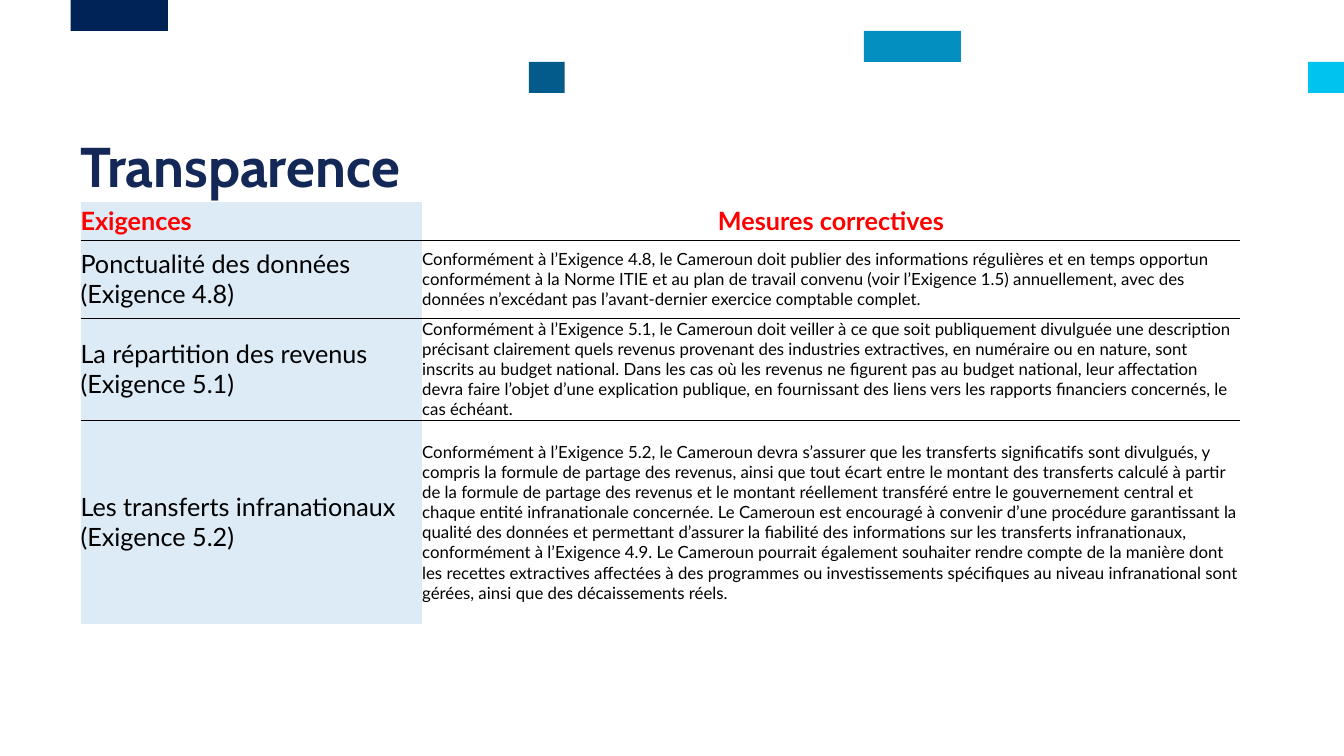
from lxml import etree
from pptx import Presentation
from pptx import util as u
from pptx.dml.color import RGBColor
from pptx.enum import shapes, text
from pptx.oxml import ns

COLORS = {
    "navy": "002357", "blue": "025B8B", "teal": "038FBF", "cyan": "00C3F0",
    "title": "132856", "red": "FF0000", "black": "000000", "pale": "DDEBF7",
    "rule": "000100",
}
BARS = [("navy", 1.78, 0, 2.45), ("blue", 13.33, 2, 0.9),
        ("teal", 21.77, 1, 2.45), ("cyan", 32.97, 2, 0.9)]
COLS = [8.61, 20.6]
ROWS = [0.98, 1.96, 2.58, 5.13]
RULES = [0, 1.5, 1, 1, 0]
CELLS = [
    (["Exigences"], ["Mesures correctives"]),
    (["Ponctualité des données (Exigence 4.8)"],
     ["Conformément à l’Exigence 4.8, le Cameroun doit publier des informations "
      "régulières et en temps opportun conformément à la Norme ITIE et au plan de "
      "travail convenu (voir l’Exigence 1.5) annuellement, avec des données "
      "n’excédant pas l’avant-dernier exercice comptable complet."]),
    (["La répartition des revenus (Exigence 5.1)"],
     ["Conformément à l’Exigence 5.1, le Cameroun doit veiller à ce que soit "
      "publiquement divulguée une description précisant clairement quels revenus "
      "provenant des industries extractives, en numéraire ou en nature, sont "
      "inscrits au budget national.",
      "Dans les cas où les revenus ne figurent pas au budget national, leur "
      "affectation devra faire l’objet d’une explication publique, en fournissant "
      "des liens vers les rapports financiers concernés, le cas échéant."]),
    (["Les transferts infranationaux (Exigence 5.2)"],
     ["Conformément à l’Exigence 5.2, le Cameroun devra s’assurer que les "
      "transferts significatifs sont divulgués, y compris la formule de partage "
      "des revenus, ainsi que tout écart entre le montant des transferts calculé à "
      "partir de la formule de partage des revenus et le montant réellement "
      "transféré entre le gouvernement central et chaque entité infranationale "
      "concernée.",
      "Le Cameroun est encouragé à convenir d’une procédure garantissant la "
      "qualité des données et permettant d’assurer la fiabilité des informations "
      "sur les transferts infranationaux, conformément à l’Exigence 4.9.",
      "Le Cameroun pourrait également souhaiter rendre compte de la manière dont "
      "les recettes extractives affectées à des programmes ou investissements "
      "spécifiques au niveau infranational sont gérées, ainsi que des "
      "décaissements réels."]),
]


def color(name):
    return RGBColor.from_string(COLORS[name])


def write(frame, words, size, font="Lato", ink="black", bold=False,
          align=text.PP_ALIGN.LEFT, space=1.0):
    para = frame.paragraphs[0]
    para.alignment = align
    para.line_spacing = space
    para.space_before = u.Pt(0)
    run = para.add_run()
    run.text = words
    run.font.size = u.Pt(size)
    run.font.name = font
    run.font.bold = bold
    run.font.color.rgb = color(ink)


def add_bars(slide, left, top, step):
    for ink, x, row, width in BARS:
        bar = slide.shapes.add_shape(
            shapes.MSO_SHAPE.RECTANGLE, u.Cm(left + x), u.Cm(top + row * step),
            u.Cm(width), u.Cm(step))
        bar.shadow.inherit = False
        bar.fill.solid()
        bar.fill.fore_color.rgb = color(ink)
        bar.line.fill.background()


def add_title(slide, left, top, width, height):
    title = slide.shapes.title
    title.left, title.top = u.Cm(left), u.Cm(top)
    title.width, title.height = u.Cm(width), u.Cm(height)
    frame = title.text_frame
    frame.auto_size = text.MSO_AUTO_SIZE.NONE
    frame.vertical_anchor = text.MSO_ANCHOR.TOP
    write(frame, "Transparence", 40, "Cabin", "title", True, space=0.94)


def set_edges(cell, above, below):
    props = cell._tc.get_or_add_tcPr()
    edges = [("lnL", 0), ("lnR", 0), ("lnT", above), ("lnB", below)]
    for spot, (side, width) in enumerate(edges):
        line = etree.Element(ns.qn("a:" + side), w=str(u.Pt(width)))
        if width:
            fill = etree.SubElement(line, ns.qn("a:solidFill"))
            etree.SubElement(fill, ns.qn("a:srgbClr"), val=COLORS["rule"])
        else:
            etree.SubElement(line, ns.qn("a:noFill"))
        props.insert(spot, line)


def add_grid(slide, left, top):
    grid = slide.shapes.add_table(
        len(ROWS), len(COLS), u.Cm(left), u.Cm(top),
        u.Cm(sum(COLS)), u.Cm(sum(ROWS))).table
    grid.first_row = grid.horz_banding = False
    for col, width in zip(grid.columns, COLS):
        col.width = u.Cm(width)
    for r, pair in enumerate(CELLS):
        grid.rows[r].height = u.Cm(ROWS[r])
        head = r == 0
        for c, parts in enumerate(pair):
            cell = grid.cell(r, c)
            cell.margin_left = cell.margin_right = cell.margin_top = 0
            cell.margin_bottom = u.Cm(0.02)
            cell.vertical_anchor = text.MSO_ANCHOR.MIDDLE
            if c == 0:
                cell.fill.solid()
                cell.fill.fore_color.rgb = color("pale")
            else:
                cell.fill.background()
            set_edges(cell, RULES[r], RULES[r + 1])
            middle = head and c == 1
            write(cell.text_frame, " ".join(parts), 18 if head or c == 0 else 12,
                  ink="red" if head else "black", bold=head,
                  align=text.PP_ALIGN.CENTER if middle else text.PP_ALIGN.LEFT)


def main():
    deck = Presentation()
    deck.slide_width, deck.slide_height = u.Cm(33.87), u.Cm(19.05)
    slide = deck.slides.add_slide(deck.slide_layouts[5])
    add_bars(slide, 0, 0, 0.78)
    add_title(slide, 1.78, 3.33, 26.57, 2.06)
    add_grid(slide, 2.03, 5.08)
    deck.save("out.pptx")


if __name__ == "__main__":
    main()
